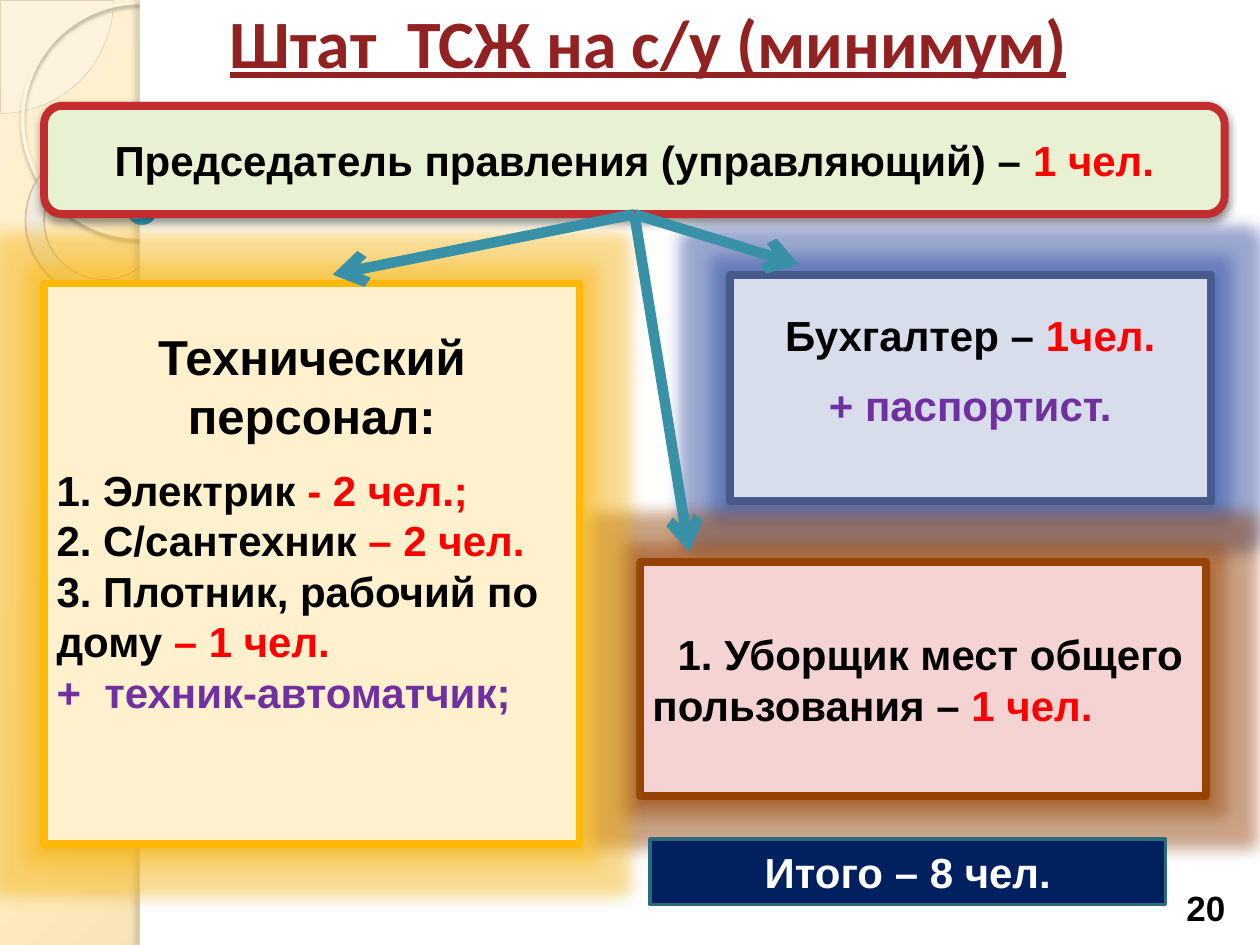
from dataclasses import dataclass
from typing import NamedTuple

from lxml import etree
from pptx import Presentation
from pptx.dml.color import RGBColor
from pptx.enum.shapes import MSO_CONNECTOR, MSO_SHAPE
from pptx.enum.text import MSO_ANCHOR, MSO_AUTO_SIZE, PP_ALIGN
from pptx.oxml.ns import qn
from pptx.util import Inches, Pt

STRAIGHT = MSO_CONNECTOR.STRAIGHT
RECT, ROUNDED = MSO_SHAPE.RECTANGLE, MSO_SHAPE.ROUNDED_RECTANGLE
OVAL, DONUT, PIE = MSO_SHAPE.OVAL, MSO_SHAPE.DONUT, MSO_SHAPE.PIE
LEFT, CENTER = PP_ALIGN.LEFT, PP_ALIGN.CENTER
MIDDLE, BOTTOM = MSO_ANCHOR.MIDDLE, MSO_ANCHOR.BOTTOM

COLUMNS, ROWS = 100, 75
SLIDE_WIDTH, SLIDE_HEIGHT = Inches(10), Inches(7.5)
BOTTOM_SIDE = 2


@dataclass(frozen=True)
class Theme:
    text_font: str = "Arial"
    title_font: str = "Calibri"
    title_size: float = 38.7
    heading_size: float = 28
    body_size: float = 24
    number_size: float = 20
    border: float = 4.5
    arrow: float = 6
    title: str = "922222"
    text: str = "000000"
    count: str = "FF0000"
    extra: str = "7030A0"
    light: str = "FFFFFF"
    teal: str = "3891A7"


THEME = Theme()


class Area(NamedTuple):
    """Left, top, width and height in grid columns and rows."""
    left: float
    top: float
    width: float
    height: float


class Shadow(NamedTuple):
    color: str
    opacity: int
    blur: float
    distance: float
    angle: int


class Run(NamedTuple):
    text: str
    color: str = THEME.text


class Line(NamedTuple):
    runs: tuple
    align: PP_ALIGN = CENTER
    size: float = THEME.body_size
    before: float = 0
    indent: float = 0


class Post(NamedTuple):
    """A framed box of the staff chart."""
    area: Area
    fill: str
    border: str
    shadow: Shadow
    lines: tuple
    glow: str = ""
    lift: float = 0
    preset: MSO_SHAPE = RECT


def col(value: float) -> int:
    return round(SLIDE_WIDTH * value / COLUMNS)


def row(value: float) -> int:
    return round(SLIDE_HEIGHT * value / ROWS)


def node(parent, tag: str, **attributes):
    return etree.SubElement(parent, qn(tag), {k: str(v) for k, v in attributes.items()})


def add_color(parent, color: str, opacity: float):
    node(node(parent, "a:srgbClr", val=color), "a:alpha", val=round(opacity * 1000))


def circle_gradient(fill, stops, focus):
    """Fill with (position, colour, opacity) stops around a focus rectangle in percent."""
    fill.gradient()
    gradient = fill._xPr.find(qn("a:gradFill"))
    gradient.clear()
    stop_list = node(gradient, "a:gsLst")
    for position, color, opacity in stops:
        add_color(node(stop_list, "a:gs", pos=position * 1000), color, opacity)
    circle = node(gradient, "a:path", path="circle")
    node(circle, "a:fillToRect", **{side: share * 1000 for side, share in zip("ltrb", focus)})


def add_box(slide, preset, area: Area, fill="", border="", border_width=0.0,
            opacity=100, shadow=None, glow=""):
    box = slide.shapes.add_shape(preset, col(area.left), row(area.top),
                                 col(area.width), row(area.height))
    if fill:
        box.fill.solid()
        box.fill.fore_color.rgb = RGBColor.from_string(fill)
        if opacity < 100:
            color = box.fill._xPr.find(qn("a:solidFill"))[0]
            node(color, "a:alpha", val=opacity * 1000)
    else:
        box.fill.background()
    if border:
        box.line.color.rgb = RGBColor.from_string(border)
        box.line.width = Pt(border_width)
    else:
        box.line.fill.background()
    box.shadow.inherit = False
    effects = box._element.spPr.find(qn("a:effectLst"))
    if glow:
        add_color(node(effects, "a:glow", rad=Pt(18)), glow, 40)
    if shadow:
        outer = node(effects, "a:outerShdw", blurRad=Pt(shadow.blur), dist=Pt(shadow.distance),
                     dir=shadow.angle * 60000, rotWithShape=0)
        add_color(outer, shadow.color, shadow.opacity)
    return box


def write(shape, lines, font=THEME.text_font, anchor=MIDDLE, underline=False, lift=0.0):
    """Write formatted lines; lift is extra room, in points, kept free below them."""
    frame = shape.text_frame
    frame.word_wrap = True
    frame.auto_size = MSO_AUTO_SIZE.NONE
    frame.vertical_anchor = anchor
    frame.margin_bottom = Pt(3.6 + lift)
    for index, line in enumerate(lines):
        paragraph = frame.add_paragraph() if index else frame.paragraphs[0]
        paragraph.alignment = line.align
        paragraph.space_before = Pt(line.before)
        if line.indent:
            paragraph._p.get_or_add_pPr().set("indent", str(col(line.indent)))
        for part in line.runs:
            run = paragraph.add_run()
            run.text = part.text
            run.font.name, run.font.size = font, Pt(line.size)
            run.font.bold, run.font.underline = True, underline
            run.font.color.rgb = RGBColor.from_string(part.color)


def add_post(slide, post: Post):
    box = add_box(slide, post.preset, post.area, post.fill, post.border, THEME.border,
                  shadow=post.shadow, glow=post.glow)
    write(box, post.lines, lift=post.lift)
    return box


def add_arrow(slide, source, end_column: float, end_row: float):
    arrow = slide.shapes.add_connector(STRAIGHT, 0, 0, col(end_column), row(end_row))
    arrow.begin_connect(source, BOTTOM_SIDE)
    arrow.line.color.rgb = RGBColor.from_string(THEME.teal)
    arrow.line.width = Pt(THEME.arrow)
    node(arrow.line._get_or_add_ln(), "a:tailEnd", type="arrow")
    node(arrow._element.spPr, "a:effectLst")


def add_decor(slide):
    circle_gradient(slide.background.fill,
                    [(0, "FFF1D3", 100), (40, "FFEBBE", 100), (100, "C9B484", 100)],
                    (-24, -20, 124, 120))
    quarter = add_box(slide, PIE, Area(-8.9, -8.9, 17.9, 17.9), "FEFAF4", "D3C39F", 0.25, opacity=33)
    quarter.adjustments[0], quarter.adjustments[1] = 0, 54
    add_box(slide, OVAL, Area(1.8, 0.2, 18.6, 18.6), border="FFF5DE", border_width=2.15,
            shadow=Shadow("B0A68F", 85, 2, 2, 90))
    ring = add_box(slide, DONUT, Area(2, 11.5, 12.3, 12.1), border="C7B893", border_width=0.58,
                   shadow=Shadow("5A5444", 35, 1, 1.2, 75))
    ring.adjustments[0] = 0.12
    ring.rotation = 38.6
    circle_gradient(ring.fill, [(0, "FFFCF6", 70), (70, "FFFEFB", 55), (100, "F0D28E", 60)],
                    (-408, -50, 508, 150))
    add_box(slide, RECT, Area(11.1, 0, 88.9, ROWS), THEME.light)
    add_box(slide, RECT, Area(11.1, 0, 0.8, ROWS), THEME.light,
            shadow=Shadow("736F63", 25, 3, 3, 180))
    bead = add_box(slide, OVAL, Area(10.1, 15.5, 2.3, 2.3), border="308EA5", border_width=0.16)
    circle_gradient(bead.fill, [(0, "DAF4FF", 95), (50, "C3E3F0", 90),
                                (95, "6BC7E8", 88), (100, "00ABD5", 85)], (25, 12, 75, 88))


CHAIRMAN = Post(
    Area(3.5, 8.4, 93.7, 8.6), "E8F2D3", "C32D2E", Shadow("000000", 43, 5, 2, 90),
    (Line((Run("Председатель правления (управляющий) – "), Run("1 чел.", THEME.count))),),
    preset=ROUNDED)
STAFF = (
    Post(Area(57.9, 21.8, 38.2, 18), "D7DDEB", "475A8D", Shadow("20315E", 38, 4, 2, 90),
         (Line((Run("Бухгалтер – "), Run("1чел.", THEME.count))),
          Line((Run("+ паспортист.", THEME.extra),), before=11.5)),
         glow="2D4BA7", lift=20.7),
    Post(Area(50.8, 44.6, 44.9, 18.6), "F5D3D3", "964305", Shadow("5C2700", 38, 4, 2, 90),
         (Line((Run("1. Уборщик мест общего пользования – "), Run("1 чел.", THEME.count)),
               LEFT, indent=2),),
         glow="9B4200"),
    Post(Area(3.5, 22.5, 42.5, 44.5), "FFF1CE", "FEB80A", Shadow("9C7000", 38, 4, 2, 90),
         (Line((Run("Технический персонал:"),), size=THEME.heading_size),
          Line((Run("1. Электрик "), Run("- 2 чел.;", THEME.count)), LEFT, before=11.5),
          Line((Run("2. С/сантехник "), Run("– 2 чел.", THEME.count)), LEFT),
          Line((Run("3. Плотник, рабочий по дому "), Run("– 1 чел.", THEME.count)), LEFT),
          Line((Run("+  техник-автоматчик;", THEME.extra),), LEFT)),
         glow="FEB80A", lift=48.3),
)
ARROW_ENDS = ((26.4, 21.8), (54.7, 43.8), (63.4, 21))


def main():
    deck = Presentation()
    deck.slide_width, deck.slide_height = SLIDE_WIDTH, SLIDE_HEIGHT
    slide = deck.slides.add_slide(deck.slide_layouts[5])
    add_decor(slide)

    title = slide.shapes.title
    title.left, title.top, title.width, title.height = col(9.1), 0, col(84.7), row(7)
    write(title, [Line((Run("Штат  ТСЖ на с/у (минимум)", THEME.title),), size=THEME.title_size)],
          font=THEME.title_font, anchor=BOTTOM, underline=True)
    slide.shapes._spTree.append(title._element)

    chairman = add_post(slide, CHAIRMAN)
    for post in STAFF:
        add_post(slide, post)
    number = slide.shapes.add_textbox(col(92.2), row(69), col(7), row(5.2))
    write(number, [Line((Run("20"),), size=THEME.number_size)], anchor=BOTTOM)
    total = add_box(slide, RECT, Area(51.6, 66.6, 40.9, 5.2), "002060", "296B7C", 2)
    write(total, [Line((Run("Итого – 8 чел.", THEME.light),))])
    for end in ARROW_ENDS:
        add_arrow(slide, chairman, *end)
    deck.save("out.pptx")


if __name__ == "__main__":
    main()
